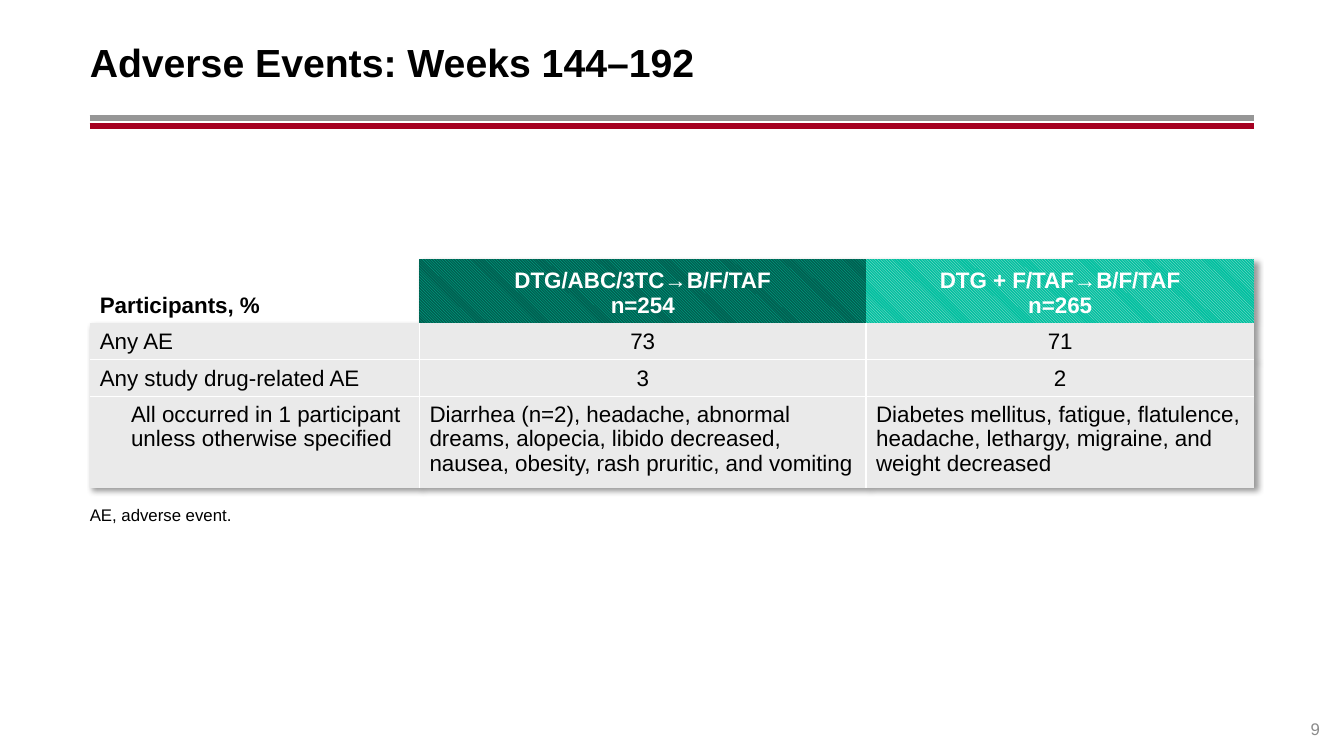
from dataclasses import dataclass

from lxml import etree
from pptx import Presentation
from pptx.dml.color import RGBColor
from pptx.enum.dml import MSO_PATTERN
from pptx.enum.shapes import MSO_CONNECTOR
from pptx.enum.text import MSO_ANCHOR, MSO_AUTO_SIZE, PP_ALIGN
from pptx.oxml import parse_xml
from pptx.oxml.ns import nsdecls, qn
from pptx.util import Inches, Pt

LEFT, CENTER, RIGHT = PP_ALIGN.LEFT, PP_ALIGN.CENTER, PP_ALIGN.RIGHT
TOP, MIDDLE, BOTTOM = MSO_ANCHOR.TOP, MSO_ANCHOR.MIDDLE, MSO_ANCHOR.BOTTOM
DIAGONAL = MSO_PATTERN.LIGHT_DOWNWARD_DIAGONAL
STRAIGHT = MSO_CONNECTOR.STRAIGHT
FIT_SHAPE, NO_FIT = MSO_AUTO_SIZE.SHAPE_TO_FIT_TEXT, MSO_AUTO_SIZE.NONE

COLORS = {
    "black": "000000", "white": "FFFFFF", "gray": "969696", "red": "A50021",
    "number": "8C8C8C", "row": "EAEAEA",
    "teal": "00C0A0", "dark teal": "006050", "pale teal": "B8E2D8",
}
NO_GRID_STYLE = "{2D5ABB26-0587-4C30-8999-92F81FD0307C}"
MARGIN_X, CONTENT_W = 0.89, 11.55


@dataclass
class TextStyle:
    size: float
    color: str = "black"
    bold: bool = False
    align: PP_ALIGN = LEFT


@dataclass
class Rule:
    y: float
    color: str


@dataclass
class Cell:
    text: str
    style: TextStyle
    anchor: MSO_ANCHOR = MIDDLE
    pattern: tuple[str, str] | None = None
    indent: float = 0


def rgb(name: str) -> RGBColor:
    return RGBColor.from_string(COLORS[name])


def write(frame, text: str, style: TextStyle, layout: dict) -> None:
    """Fill a text frame, one paragraph per line of text."""
    for key, value in layout.items():
        setattr(frame, key, value)
    frame.text = text
    for paragraph in frame.paragraphs:
        paragraph.alignment = style.align
        paragraph.space_before = Pt(0)
        font = paragraph.runs[0].font
        settings = {"name": "Arial", "size": Pt(style.size), "bold": style.bold}
        for key, value in settings.items():
            setattr(font, key, value)
        font.color.rgb = rgb(style.color)


def place(shape, left: float, top: float, width: float, height: float) -> None:
    box = {"left": left, "top": top, "width": width, "height": height}
    for key, value in box.items():
        setattr(shape, key, Inches(value))


def margins(left: float, top: float, right: float, bottom: float) -> dict:
    return {"margin_left": Inches(left), "margin_top": Inches(top),
            "margin_right": Inches(right), "margin_bottom": Inches(bottom)}


def draw_rule(slide, rule: Rule) -> None:
    y = Inches(rule.y)
    line = slide.shapes.add_connector(
        STRAIGHT, Inches(MARGIN_X), y, Inches(MARGIN_X + CONTENT_W), y)
    line.line.color.rgb = rgb(rule.color)
    line.line.width = Pt(4.25)
    etree.SubElement(line._element.spPr, qn("a:effectLst"))


def set_borders(cell, sides: list[str]) -> None:
    """Add white 1 pt borders; they come before the fill in the cell."""
    props = cell._tc.get_or_add_tcPr()
    for position, side in enumerate(sides):
        props.insert(position, parse_xml(
            f'<a:ln{side} {nsdecls("a")} w="12700"><a:solidFill>'
            f'<a:srgbClr val="{COLORS["white"]}"/></a:solidFill></a:ln{side}>'))


def draw_cell(target, cell: Cell, is_body: bool) -> None:
    write(target.text_frame, cell.text, cell.style, {"word_wrap": True})
    target.vertical_anchor = cell.anchor
    if cell.indent:
        props = target.text_frame.paragraphs[0]._p.get_or_add_pPr()
        props.set("marL", str(Inches(cell.indent)))
    if cell.pattern:
        target.fill.patterned()
        target.fill.pattern = DIAGONAL
        target.fill.fore_color.rgb, target.fill.back_color.rgb = map(rgb, cell.pattern)
    elif is_body:
        target.fill.solid()
        target.fill.fore_color.rgb = rgb("row")
    else:
        target.fill.background()


def draw_table(slide, rows: list[list[Cell]], widths: list[float],
               heights: list[float]) -> None:
    table = slide.shapes.add_table(
        len(rows), len(widths), Inches(MARGIN_X), Inches(2.57),
        Inches(CONTENT_W), Inches(sum(heights))).table
    table.first_row = table.horz_banding = False
    props = table._tbl.tblPr
    props.find(qn("a:tableStyleId")).text = NO_GRID_STYLE
    props.insert(0, parse_xml(
        f'<a:effectLst {nsdecls("a")}><a:outerShdw blurRad="50800" dist="38100" '
        'dir="2700000" algn="tl" rotWithShape="0"><a:srgbClr val="000000">'
        '<a:alpha val="40000"/></a:srgbClr></a:outerShdw></a:effectLst>'))
    for column, width in zip(table.columns, widths):
        column.width = Inches(width)
    for r, row in enumerate(rows):
        table.rows[r].height = Inches(heights[r])
        for c, cell in enumerate(row):
            target = table.cell(r, c)
            draw_cell(target, cell, is_body=r > 0)
            if r > 0:
                inner = {"L": c > 0, "R": c < len(row) - 1,
                         "T": r > 1, "B": r < len(rows) - 1}
                set_borders(target, [side for side, shown in inner.items() if shown])


LABEL = TextStyle(16)
VALUE = TextStyle(16, align=CENTER)
HEADER = TextStyle(16, "white", True, CENTER)

RULES = [Rule(1.17, "gray"), Rule(1.25, "red")]
ADVERSE_EVENTS = [
    [Cell("Participants, %", TextStyle(16, bold=True), BOTTOM),
     Cell("DTG/ABC/3TC→B/F/TAF\nn=254", HEADER, BOTTOM, ("teal", "dark teal")),
     Cell("DTG + F/TAF→B/F/TAF\nn=265", HEADER, BOTTOM, ("pale teal", "teal"))],
    [Cell("Any AE", LABEL), Cell("73", VALUE), Cell("71", VALUE)],
    [Cell("Any study drug-related AE", LABEL), Cell("3", VALUE), Cell("2", VALUE)],
    [Cell("All occurred in 1 participant unless otherwise specified",
          LABEL, TOP, indent=0.31),
     Cell("Diarrhea (n=2), headache, abnormal dreams, alopecia, libido decreased, "
          "nausea, obesity, rash pruritic, and vomiting", LABEL, TOP),
     Cell("Diabetes mellitus, fatigue, flatulence, headache, lethargy, migraine, "
          "and weight decreased", LABEL, TOP)],
]


def main() -> None:
    deck = Presentation()
    deck.slide_width, deck.slide_height = Inches(13.33), Inches(7.5)
    slide = deck.slides.add_slide(deck.slide_layouts[1])

    # Title and the double rule below it
    title = slide.shapes.title
    place(title, MARGIN_X, 0.18, CONTENT_W, 0.86)
    write(title.text_frame, "Adverse Events: Weeks 144–192", TextStyle(28, bold=True),
          {"vertical_anchor": MIDDLE, "word_wrap": True, "auto_size": NO_FIT,
           **margins(0, 0.05, 0.1, 0.05)})
    for rule in RULES:
        draw_rule(slide, rule)

    # Adverse event table
    draw_table(slide, ADVERSE_EVENTS, [3.27, 4.43, 3.85], [0.6, 0.35, 0.35, 0.85])

    # Abbreviation note
    bottom_text = {"vertical_anchor": BOTTOM, "word_wrap": True, **margins(0, 0, 0, 0)}
    abbreviations = slide.placeholders[1]
    place(abbreviations, MARGIN_X, 5.01, CONTENT_W, 0.2)
    write(abbreviations.text_frame, "AE, adverse event.", TextStyle(12),
          {**bottom_text, "auto_size": FIT_SHAPE})
    props = abbreviations.text_frame.paragraphs[0]._p.get_or_add_pPr()
    for key in ("marL", "indent"):
        props.set(key, "0")
    etree.SubElement(props, qn("a:buNone"))

    # Page number
    page_number = slide.shapes.add_textbox(
        Inches(12.44), Inches(6.93), Inches(0.65), Inches(0.4))
    write(page_number.text_frame, "9", TextStyle(12, "number", align=RIGHT), bottom_text)

    deck.save("out.pptx")


if __name__ == "__main__":
    main()
